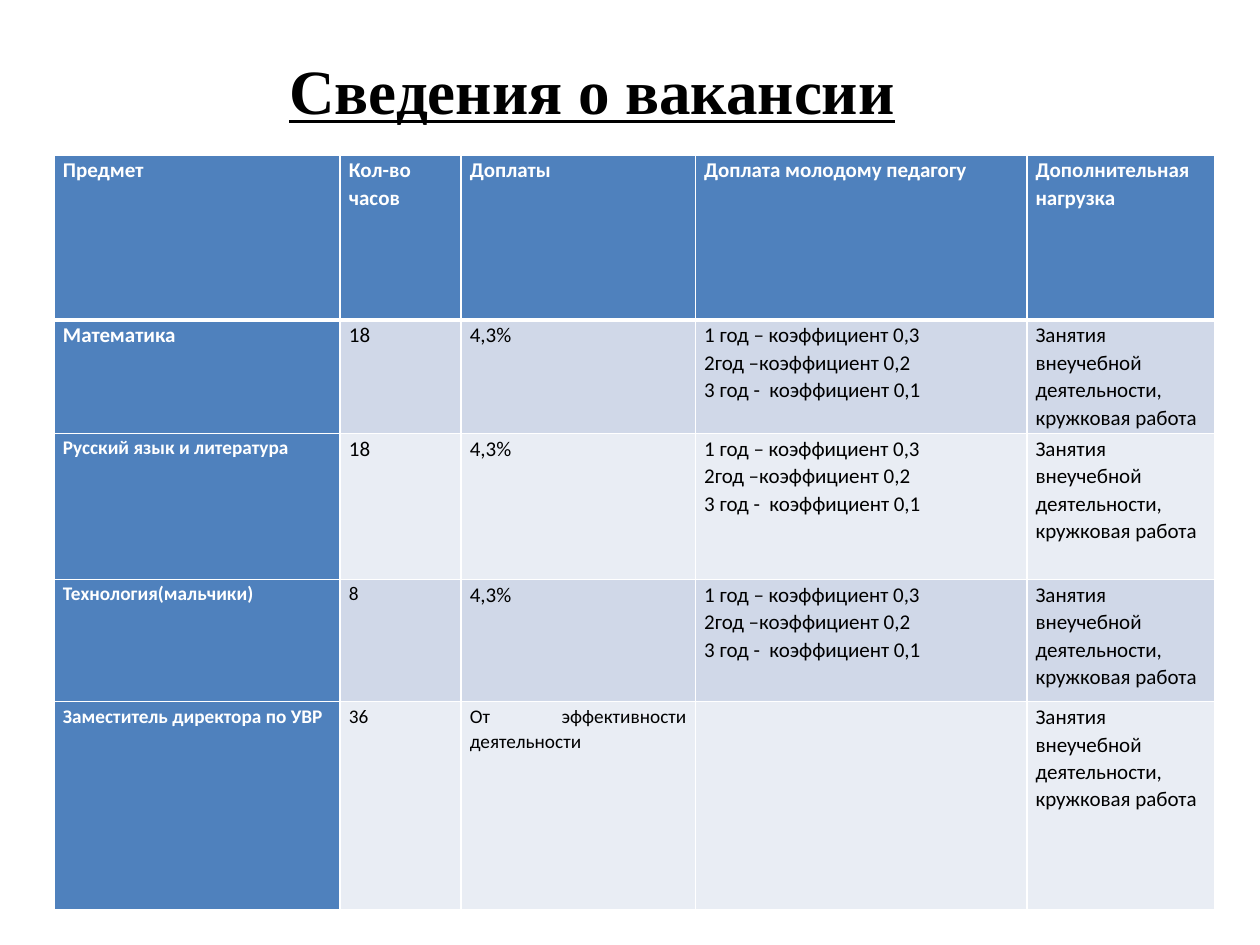
from lxml import etree
from pptx import Presentation
from pptx.dml.color import RGBColor
from pptx.enum.text import MSO_AUTO_SIZE, PP_ALIGN
from pptx.oxml.ns import qn
from pptx.util import Inches, Pt

CENTER, JUSTIFY = PP_ALIGN.CENTER, PP_ALIGN.JUSTIFY
FIT_SHAPE = MSO_AUTO_SIZE.SHAPE_TO_FIT_TEXT

COLORS = {"text": "000000", "white": "FFFFFF", "header": "4F81BD",
          "odd_row": "D0D8E8", "even_row": "E9EDF4"}

COLUMN_WIDTHS = [2.27, 0.96, 1.86, 2.63, 1.49]
ROW_HEIGHTS = [1.31, 0.9, 1.16, 0.97, 1.65]

HEADERS = ["Предмет ", "Кол-во часов", "Доплаты ",
           "Доплата молодому педагогу", "Дополнительная нагрузка"]
RATE = "4,3%"
YOUNG_TEACHER = ["1 год – коэффициент 0,3", "2год –коэффициент 0,2",
                 "3 год -  коэффициент 0,1"]
EXTRA_WORK = "Занятия внеучебной деятельности, кружковая работа"
VACANCIES = [
    ("Математика", "18", RATE, YOUNG_TEACHER),
    ("Русский язык и литература", "18", RATE, YOUNG_TEACHER),
    ("Технология(мальчики)", "8", RATE, YOUNG_TEACHER),
    ("Заместитель директора по УВР", "36", "От эффективности деятельности", []),
]
# Cells (row, column) set smaller than the rest of the table
SMALL_CELLS = {(2, 0), (3, 0), (3, 1), (4, 0), (4, 1), (4, 2)}


class SlideBuilder:
    title_font = "Times New Roman"
    table_font = "Calibri"

    def __init__(self, slide):
        self.slide = slide

    def add_run(self, paragraph, text, font, size, color, bold, underline=False):
        run = paragraph.add_run()
        run.text = text
        run.font.name = font
        run.font.size = Pt(size)
        run.font.bold = bold
        run.font.underline = underline
        run.font.color.rgb = RGBColor.from_string(COLORS[color])

    def add_title(self, text, left, top, width, height):
        shape = self.slide.shapes.add_textbox(
            Inches(left), Inches(top), Inches(width), Inches(height))
        frame = shape.text_frame
        frame.word_wrap = False
        frame.auto_size = FIT_SHAPE
        paragraph = frame.paragraphs[0]
        paragraph.alignment = CENTER
        self.add_run(paragraph, text, self.title_font, 36, "text", True, True)

    def add_table(self, rows, left, top):
        shape = self.slide.shapes.add_table(
            len(rows), len(COLUMN_WIDTHS), Inches(left), Inches(top),
            Inches(sum(COLUMN_WIDTHS)), Inches(sum(ROW_HEIGHTS)))
        table = shape.table
        for column, width in zip(table.columns, COLUMN_WIDTHS):
            column.width = Inches(width)
        for row, height in zip(table.rows, ROW_HEIGHTS):
            row.height = Inches(height)
        for row_index, values in enumerate(rows):
            for column_index, value in enumerate(values):
                self.fill_cell(table.cell(row_index, column_index),
                               value, row_index, column_index)

    def fill_cell(self, cell, value, row, column):
        is_header = row == 0 or column == 0
        band = "odd_row" if row % 2 else "even_row"
        cell.fill.solid()
        cell.fill.fore_color.rgb = RGBColor.from_string(
            COLORS["header" if is_header else band])
        cell.margin_left = cell.margin_right = Inches(0.07)
        cell.margin_top, cell.margin_bottom = Inches(0.01), 0
        self.set_borders(cell, top=3 if row == 1 else 1,
                         bottom=3 if row == 0 else 1)

        lines = [value] if isinstance(value, str) else value
        frame = cell.text_frame
        for index, line in enumerate(lines):
            paragraph = frame.add_paragraph() if index else frame.paragraphs[0]
            paragraph.alignment = JUSTIFY
            paragraph.line_spacing = 1.07
            self.add_run(paragraph, line, self.table_font,
                         11 if (row, column) in SMALL_CELLS else 12,
                         "white" if is_header else "text", is_header)

    def set_borders(self, cell, top, bottom):
        """Draw white cell borders; the schema wants them ahead of the fill."""
        properties = cell._tc.get_or_add_tcPr()
        sides = [("lnL", 1), ("lnR", 1), ("lnT", top), ("lnB", bottom)]
        for index, (side, width) in enumerate(sides):
            line = etree.Element(qn(f"a:{side}"), w=str(Pt(width)))
            fill = etree.SubElement(line, qn("a:solidFill"))
            etree.SubElement(fill, qn("a:srgbClr"), val=COLORS["white"])
            properties.insert(index, line)


def main():
    presentation = Presentation()
    presentation.slide_width = Inches(10)
    presentation.slide_height = Inches(7.5)
    slide = presentation.slides.add_slide(presentation.slide_layouts[6])
    builder = SlideBuilder(slide)
    rows = [HEADERS] + [[*vacancy, EXTRA_WORK] for vacancy in VACANCIES]
    builder.add_table(rows, 0.43, 1.23)
    builder.add_title("Сведения о вакансии", 2.17, 0.36, 5.06, 0.71)
    presentation.save("out.pptx")


if __name__ == "__main__":
    main()
